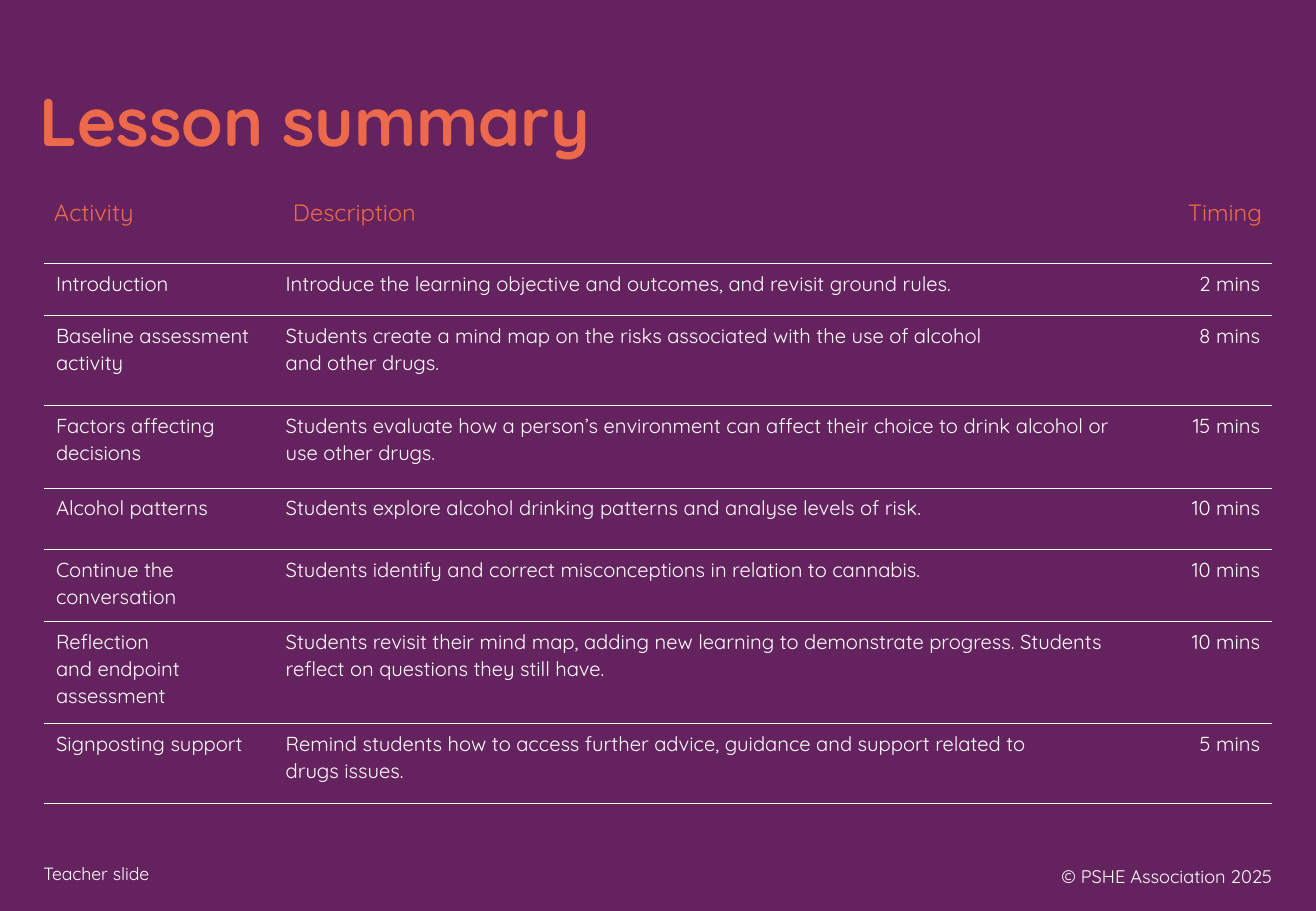
from dataclasses import dataclass

from lxml.etree import SubElement
from pptx import Presentation
from pptx.dml.color import RGBColor
from pptx.enum.text import MSO_ANCHOR, PP_ALIGN
from pptx.oxml.ns import qn
from pptx.util import Pt


@dataclass(frozen=True)
class Theme:
    font: str = "Quicksand"
    background: str = "64235E"
    accent: str = "ED694B"
    light: str = "FFFFFF"
    title_size: float = 40
    header_size: float = 14
    body_size: float = 12
    label_size: float = 10.5
    copyright_size: float = 10.8
    rule_width: float = 0.5


THEME = Theme()
HEADERS = ("Activity", "Description", "Timing")
HEADER_LEFT_MARGINS = (6, 11.5, 6)
COLUMN_SHARES = (0.187, 0.709, 0.104)
ROW_HEIGHTS = (44.6, 31, 53.3, 49, 36.7, 42.5, 60.5, 47.5)
ACTIVITIES = (
    ("Introduction",
     "Introduce the learning objective and outcomes, and revisit ground rules.",
     "2 mins"),
    ("Baseline assessment activity",
     "Students create a mind map on the risks associated with the use of alcohol\n"
     "and other drugs.",
     "8 mins"),
    ("Factors affecting decisions",
     "Students evaluate how a person’s environment can affect their choice to "
     "drink alcohol or use other drugs.",
     "15 mins"),
    ("Alcohol patterns",
     "Students explore alcohol drinking patterns and analyse levels of risk.",
     "10 mins"),
    ("Continue the conversation",
     "Students identify and correct misconceptions in relation to cannabis.",
     "10 mins"),
    ("Reflection\nand endpoint assessment",
     "Students revisit their mind map, adding new learning to demonstrate "
     "progress. Students reflect on questions they still have.",
     "10 mins"),
    ("Signposting support",
     "Remind students how to access further advice, guidance and support related to\n"
     "drugs issues.",
     "5 mins"),
)


def add_text(paragraph, text, size, color, bold=False):
    for index, line in enumerate(text.split("\n")):
        if index:
            paragraph.add_line_break()
        run = paragraph.add_run()
        run.text = line
        run.font.name = THEME.font
        run.font.size = Pt(size)
        run.font.bold = bold
        run.font.color.rgb = RGBColor.from_string(color)


def add_text_box(slide, box, text, size, color, anchor=MSO_ANCHOR.TOP,
                 alignment=PP_ALIGN.LEFT, spacing=1.0, bold=False):
    shape = slide.shapes.add_textbox(*(Pt(length) for length in box))
    frame = shape.text_frame
    frame.word_wrap = True
    frame.vertical_anchor = anchor
    paragraph = frame.paragraphs[0]
    paragraph.alignment = alignment
    paragraph.line_spacing = spacing
    add_text(paragraph, text, size, color, bold)


def add_title(slide, box):
    add_text_box(slide, box, "Lesson summary", THEME.title_size, THEME.accent,
                 MSO_ANCHOR.MIDDLE, spacing=0.9, bold=True)


def set_borders(cell, is_header):
    properties = cell._tc.get_or_add_tcPr()
    visible = {"lnB"} if is_header else {"lnT", "lnB"}
    for side in ("lnL", "lnR", "lnT", "lnB"):
        line = SubElement(properties, qn(f"a:{side}"), w=str(Pt(THEME.rule_width)))
        if side in visible:
            fill = SubElement(line, qn("a:solidFill"))
            SubElement(fill, qn("a:srgbClr"), val=THEME.light)
        else:
            SubElement(line, qn("a:noFill"))
    cell.fill.background()


def fill_cell(cell, text, column, is_header):
    set_borders(cell, is_header)
    paragraph = cell.text_frame.paragraphs[0]
    paragraph.alignment = PP_ALIGN.RIGHT if column == 2 else PP_ALIGN.LEFT
    if is_header:
        cell.margin_left = Pt(HEADER_LEFT_MARGINS[column])
        cell.margin_right = cell.margin_top = cell.margin_bottom = Pt(6)
        add_text(paragraph, text, THEME.header_size, THEME.accent)
    else:
        paragraph.line_spacing = Pt(16)
        if column == 1:
            paragraph.space_after = Pt(6)
        add_text(paragraph, text, THEME.body_size, THEME.light)


def add_activity_table(slide, box):
    rows = (HEADERS, *ACTIVITIES)
    frame = slide.shapes.add_table(len(rows), len(HEADERS),
                                   *(Pt(length) for length in box))
    table = frame.table
    table.first_row = False
    table.horz_banding = False
    for column, share in zip(table.columns, COLUMN_SHARES):
        column.width = Pt(box[2] * share)
    for row, height in zip(table.rows, ROW_HEIGHTS):
        row.height = Pt(height)
    for row_index, texts in enumerate(rows):
        for column, text in enumerate(texts):
            fill_cell(table.cell(row_index, column), text, column, row_index == 0)


def add_footer(slide, box):
    left, top, width, height = box
    copyright_width = 175.7
    add_text_box(slide, (left, top + 2.9, 488, 21), "Teacher slide",
                 THEME.label_size, THEME.light)
    add_text_box(slide, (left + width - copyright_width, top, copyright_width, height),
                 "© PSHE Association 2025", THEME.copyright_size, THEME.light,
                 MSO_ANCHOR.MIDDLE, PP_ALIGN.RIGHT)


def add_summary_slide(presentation):
    slide = presentation.slides.add_slide(presentation.slide_layouts[6])
    background = slide.background.fill
    background.solid()
    background.fore_color.rgb = RGBColor.from_string(THEME.background)
    add_title(slide, (16.6, 46.8, 590.4, 54.7))
    add_activity_table(slide, (26, 111.4, 727.9, sum(ROW_HEIGHTS)))
    add_footer(slide, (18.7, 504.7, 742.3, 28.8))


def main():
    presentation = Presentation()
    presentation.slide_width = Pt(779.76)
    presentation.slide_height = Pt(540)
    add_summary_slide(presentation)
    presentation.save("out.pptx")


if __name__ == "__main__":
    main()
